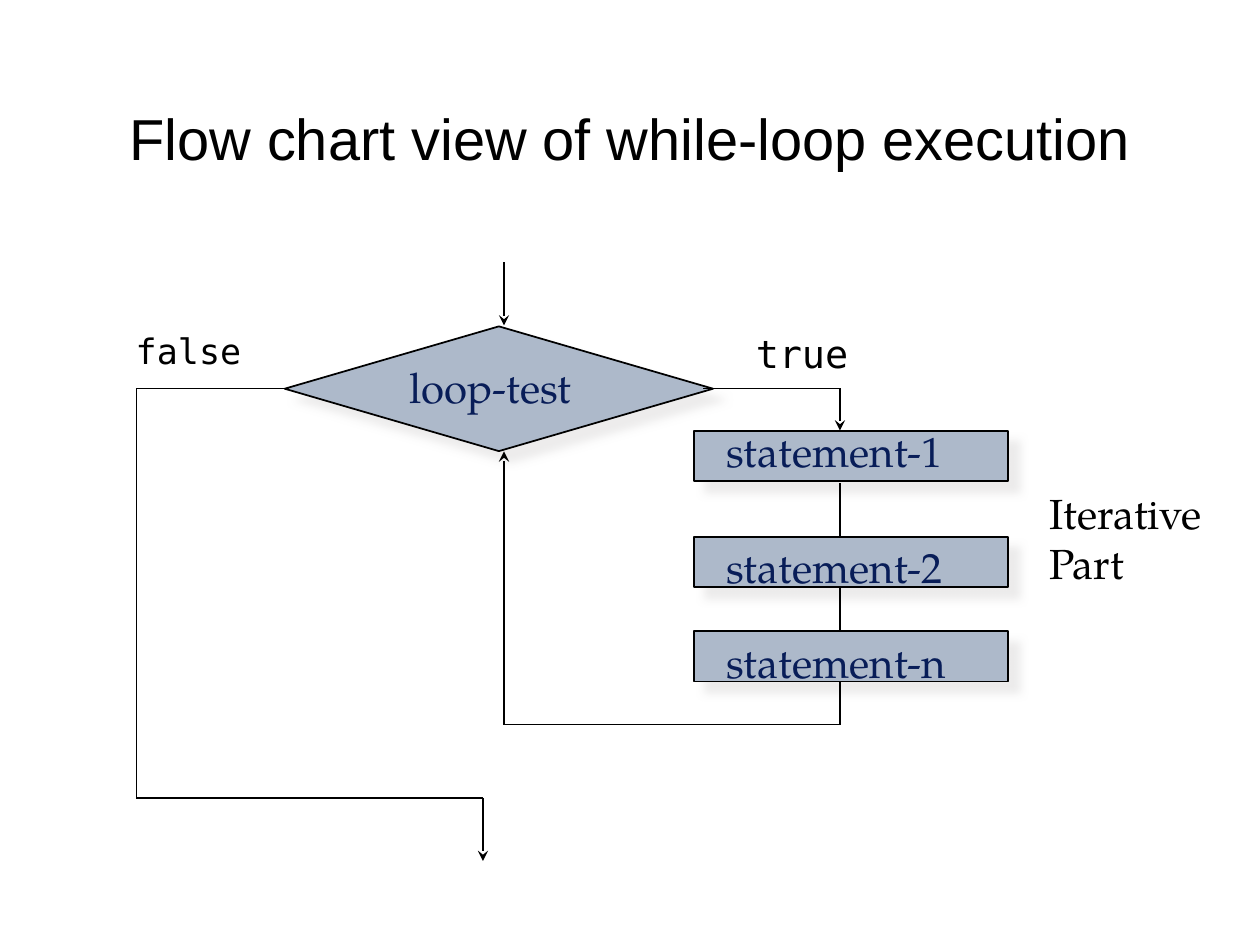
import itertools
from typing import NamedTuple

import pptx
import pptx.util
from lxml import etree
from pptx.dml.color import RGBColor
from pptx.enum.shapes import MSO_CONNECTOR, MSO_SHAPE
from pptx.enum.text import MSO_ANCHOR, MSO_AUTO_SIZE, PP_ALIGN
from pptx.oxml.ns import qn

Pt = pptx.util.Pt
BLACK, NAVY, STEEL, GREY = "000000", "081D58", "ADB9CA", "E7E6E6"
SERIF, MONO = "TeX Gyre Pagella", "DejaVu Sans Mono"


class Box(NamedTuple):
    left: float
    top: float
    width: float
    height: float


class Step(NamedTuple):
    text: str
    top: float
    label: float


class Route(NamedTuple):
    points: list[tuple[float, float]]
    arrow: bool = False


TEST = Box(162.72, 186.5, 244.8, 71.3)
STEPS = [
    Step("statement-1", 246.25, 239.75),
    Step("statement-2", 306.75, 306),
    Step("statement-n", 360.75, 360),
]
ENTRY, EXIT, BODY, SIDE = 288, 276, 480, 78
ROUTES = [
    Route([(ENTRY, 150), (ENTRY, 186)], True),
    Route([(402, 222), (BODY, 222), (BODY, 246)], True),
    Route([(BODY, 276), (BODY, 306)]),
    Route([(BODY, 336), (BODY, 360)]),
    Route([(BODY, 390), (BODY, 414), (ENTRY, 414), (ENTRY, 258)], True),
    Route([(162, 222), (SIDE, 222), (SIDE, 456), (EXIT, 456), (EXIT, 492)], True),
]


def tint(code: str) -> RGBColor:
    return RGBColor.from_string(code)


def add_shade(shape) -> None:
    """Give the shape a soft grey shadow to the lower right."""
    shape.shadow.inherit = False
    effects = shape._element.spPr.find(qn("a:effectLst"))
    outer = etree.SubElement(
        effects, qn("a:outerShdw"), blurRad=str(Pt(5)), dist=str(Pt(8.5)),
        dir="2700000", algn="ctr", rotWithShape="0")
    color = etree.SubElement(outer, qn("a:srgbClr"), val=GREY)
    etree.SubElement(color, qn("a:alpha"), val="75000")


def add_block(slide, kind: MSO_SHAPE, box: Box) -> None:
    shape = slide.shapes.add_shape(kind, *map(Pt, box))
    shape.fill.solid()
    shape.fill.fore_color.rgb = tint(STEEL)
    shape.line.color.rgb = tint(BLACK)
    shape.line.width = Pt(1)
    add_shade(shape)


def add_route(slide, route: Route) -> None:
    """Join the points with straight lines; an arrow ends the last one."""
    for start, end in itertools.pairwise(route.points):
        line = slide.shapes.add_connector(
            MSO_CONNECTOR.STRAIGHT, *map(Pt, start + end))
        line.line.color.rgb = tint(BLACK)
        line.line.width = Pt(1)
        props = line._element.spPr
        etree.SubElement(props, qn("a:effectLst"))
        if route.arrow and end == route.points[-1]:
            etree.SubElement(props.find(qn("a:ln")), qn("a:tailEnd"), type="stealth")


def add_text(slide, text: str, box: Box, *, size: float = 24, font: str = SERIF,
             color: str = BLACK, wrap: bool = False, grow: bool = True,
             align: PP_ALIGN = PP_ALIGN.LEFT, anchor: MSO_ANCHOR = MSO_ANCHOR.TOP,
             space: float = 1) -> None:
    frame = slide.shapes.add_textbox(*map(Pt, box)).text_frame
    frame.word_wrap = wrap
    frame.auto_size = MSO_AUTO_SIZE.SHAPE_TO_FIT_TEXT if grow else MSO_AUTO_SIZE.NONE
    frame.vertical_anchor = anchor
    frame.text = text
    for para in frame.paragraphs:
        para.alignment = align
        para.line_spacing = space
        style = para.runs[0].font
        style.size = Pt(size)
        style.name = font
        style.color.rgb = tint(color)


def main() -> None:
    deck = pptx.Presentation()
    deck.slide_width, deck.slide_height = Pt(720), Pt(540)
    slide = deck.slides.add_slide(deck.slide_layouts[6])

    add_text(slide, "Flow chart view of while-loop execution",
             Box(49.7, 28.8, 620.6, 104.4), size=33, font="Arial", wrap=True,
             grow=False, align=PP_ALIGN.CENTER, anchor=MSO_ANCHOR.MIDDLE, space=0.9)

    add_block(slide, MSO_SHAPE.DIAMOND, TEST)
    for step in STEPS:
        add_block(slide, MSO_SHAPE.RECTANGLE, Box(396.75, step.top, 179.25, 28.8))
    for route in ROUTES:
        add_route(slide, route)

    add_text(slide, "loop-test", Box(226.8, 203, 107.3, 36), color=NAVY)
    for step in STEPS:
        add_text(slide, step.text, Box(408.25, step.label, 167.75, 36),
                 color=NAVY, wrap=True)
    add_text(slide, "Iterative\nPart", Box(592.5, 275, 103, 64.8))
    add_text(slide, "false", Box(70.5, 185, 74.9, 31.7), size=20, font=MONO)
    add_text(slide, "true", Box(424.8, 185, 68.4, 33.8), size=22, font=MONO)

    deck.save("out.pptx")


if __name__ == "__main__":
    main()
